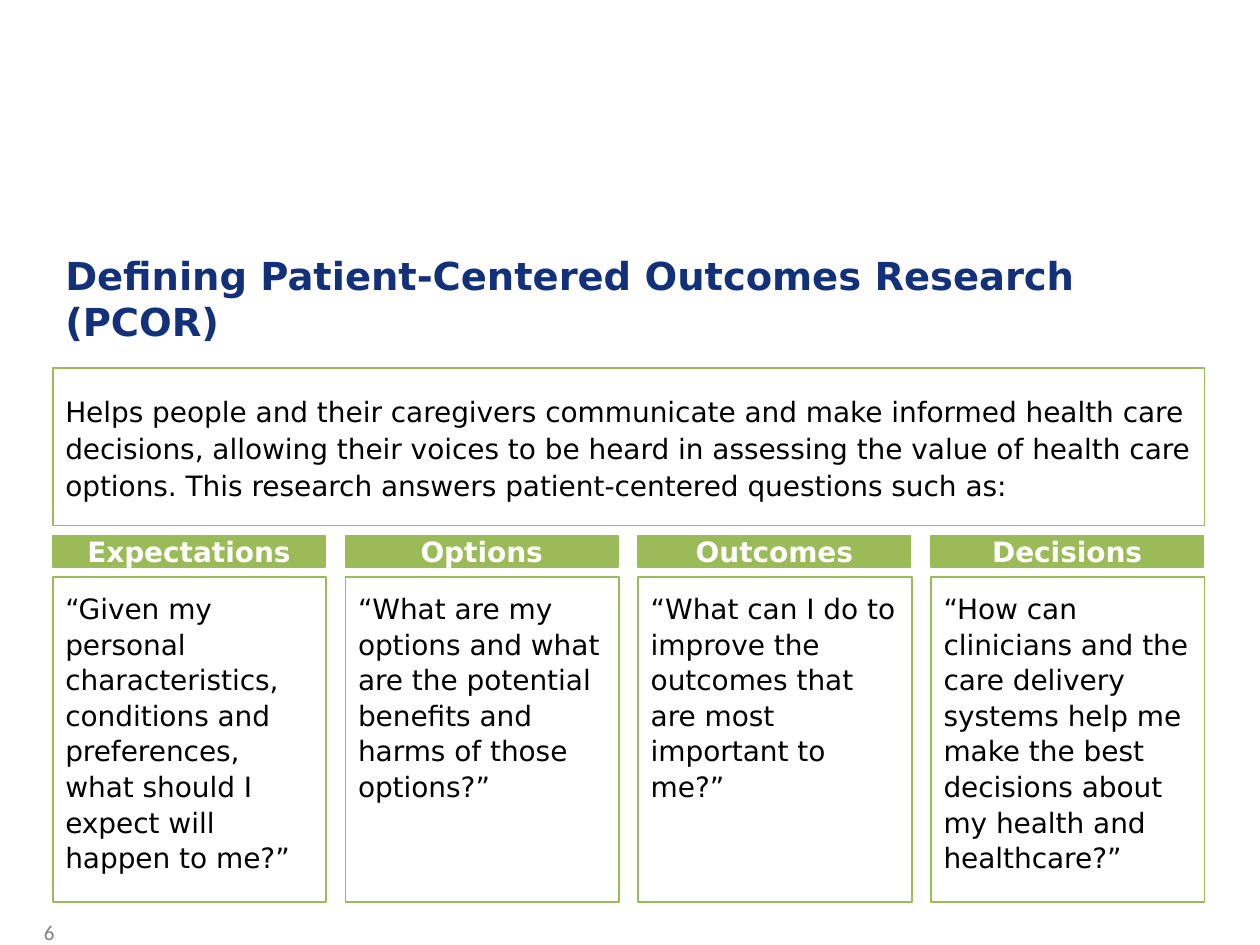
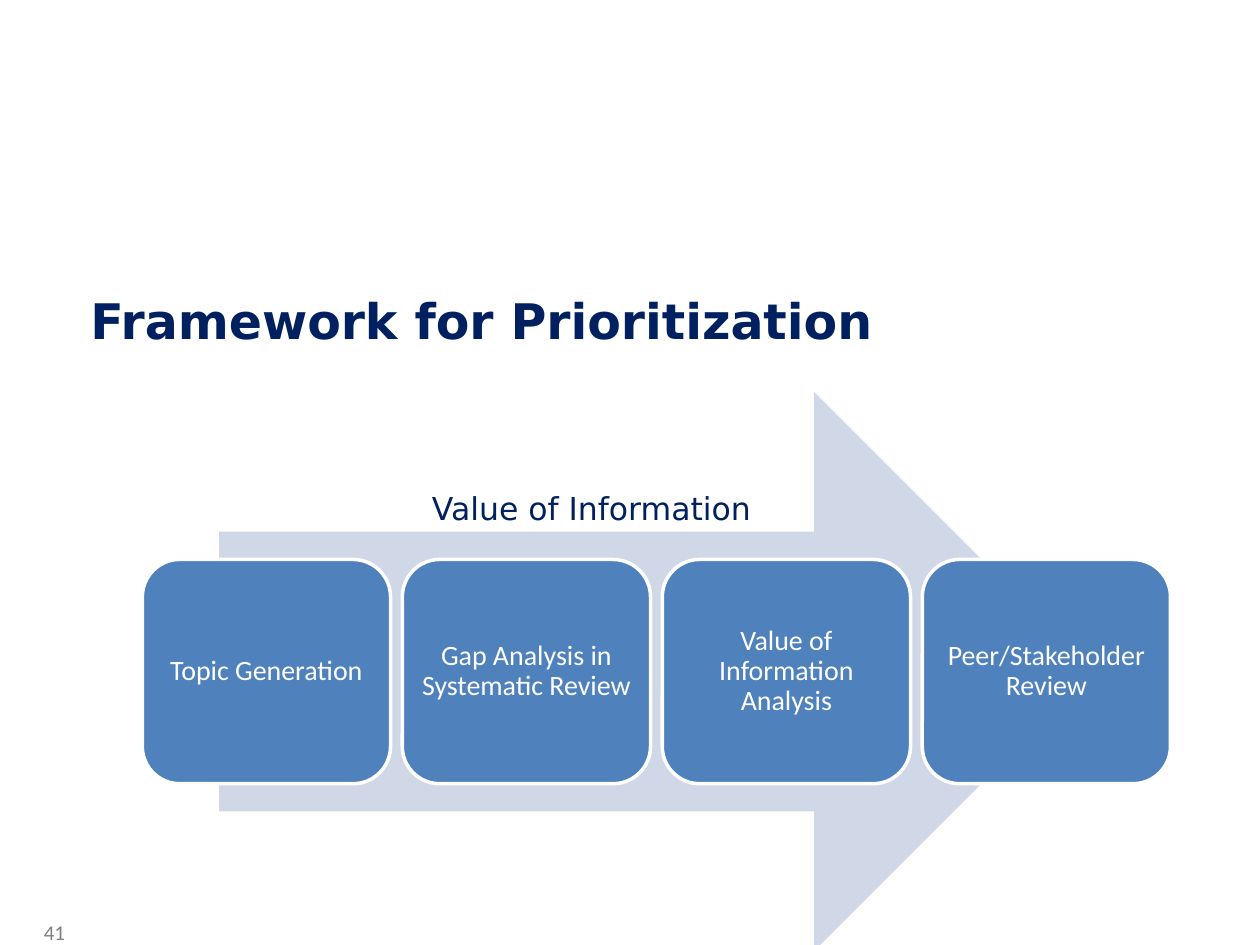
from pptx import Presentation
from pptx.dml.color import RGBColor
from pptx.enum.shapes import MSO_SHAPE as Shape
from pptx.enum.text import MSO_ANCHOR as Anchor, PP_ALIGN as Align
from pptx.util import Inches, Pt

COLORS = {
    "green": "9BBB59", "navy": "13307A", "dark": "002060", "blue": "4F81BD",
    "pale": "D0D8E8", "gray": "7F7F7F", "black": "000000", "white": "FFFFFF",
}
SANS = "DejaVu Sans"
BODY = "Calibri"

QUESTIONS = [
    ("Expectations", "“Given my personal characteristics, conditions and preferences, "
                     "what should I expect will happen to me?”"),
    ("Options", "“What are my options and what are the potential benefits and harms "
                "of those options?”"),
    ("Outcomes", "“What can I do to improve the outcomes that are most important to me?”"),
    ("Decisions", "“How can clinicians and the care delivery systems help me make the best "
                  "decisions about my health and healthcare?”"),
]
STEPS = ["Topic Generation", "Gap Analysis in Systematic Review",
         "Value of Information Analysis", "Peer/Stakeholder Review"]


def color(name):
    """Return the named colour."""
    return RGBColor.from_string(COLORS[name])


def write(box, text, size, ink, font=SANS, bold=False, align=Align.LEFT,
          anchor=Anchor.TOP, margins=(0.1, 0.05), spacing=1.0):
    """Write one styled paragraph into a box."""
    frame = box.text_frame
    frame.word_wrap = True
    frame.vertical_anchor = anchor
    frame.margin_left = frame.margin_right = Inches(margins[0])
    frame.margin_top = frame.margin_bottom = Inches(margins[1])
    para = frame.paragraphs[0]
    para.text = text
    para.alignment = align
    para.line_spacing = spacing
    para.font.name = font
    para.font.size = Pt(size)
    para.font.bold = bold
    para.font.color.rgb = color(ink)


def add_label(page, area, text, size, ink, **style):
    """Add a text box."""
    box = page.shapes.add_textbox(*map(Inches, area))
    write(box, text, size, ink, **style)


def add_panel(page, kind, area, fill=None, line=None, weight=1):
    """Add a flat preset shape with optional fill and outline."""
    panel = page.shapes.add_shape(kind, *map(Inches, area))
    panel.shadow.inherit = False
    if fill:
        panel.fill.solid()
        panel.fill.fore_color.rgb = color(fill)
    else:
        panel.fill.background()
    if line:
        panel.line.color.rgb = color(line)
        panel.line.width = Pt(weight)
    else:
        panel.line.fill.background()
    return panel


def add_page(deck, number, title, area, size, ink, align=Align.LEFT):
    """Add a page with its title and page number."""
    page = deck.slides.add_slide(deck.slide_layouts[6])
    add_label(page, area, title, size, ink, bold=True, align=align)
    add_label(page, (0.25, 7.25, 0.67, 0.3), str(number), 12, "gray", font=BODY)
    return page


def add_question(page, left, heading, question):
    """Add a heading bar above an outlined question."""
    bar = add_panel(page, Shape.RECTANGLE, (left, 4.25, 2.16, 0.25), "green", "green")
    write(bar, heading, 16, "white", bold=True, align=Align.CENTER,
          anchor=Anchor.MIDDLE, margins=(0.04, 0.04))
    panel = add_panel(page, Shape.RECTANGLE, (left, 4.58, 2.17, 2.58), line="green")
    write(panel, question, 16, "black", margins=(0.1, 0.1), spacing=1.06)


def add_step(page, left, text):
    """Add one rounded step of the framework."""
    step = add_panel(page, Shape.ROUNDED_RECTANGLE, (left, 4.44, 1.97, 1.78),
                     "blue", "white", 2)
    write(step, text, 16, "white", font=BODY, align=Align.CENTER,
          anchor=Anchor.MIDDLE, margins=(0, 0), spacing=0.9)


def build_definition(deck):
    """Build the page that defines the research."""
    page = add_page(deck, 6, "Defining Patient-Centered Outcomes Research (PCOR)",
                    (0.42, 1.95, 9.13, 0.84), 22, "navy")
    summary = add_panel(page, Shape.RECTANGLE, (0.42, 2.92, 9.14, 1.25), line="green")
    write(summary, "Helps people and their caregivers communicate and make informed "
          "health care decisions, allowing their voices to be heard in assessing the "
          "value of health care options. This research answers patient-centered "
          "questions such as:", 16, "black", anchor=Anchor.MIDDLE,
          margins=(0.1, 0.04), spacing=1.1)
    for column, (heading, question) in enumerate(QUESTIONS):
        add_question(page, 0.42 + column * 6.97 / 3, heading, question)


def build_framework(deck):
    """Build the page with the prioritization steps."""
    page = add_page(deck, 41, "Framework for Prioritization",
                    (0.12, 2.26, 7.4, 1.25), 28, "dark", Align.CENTER)
    add_panel(page, Shape.RIGHT_ARROW, (1.74, 3.11, 6.94, 4.44), "pale")
    for column, text in enumerate(STEPS):
        add_step(page, 1.13 + column * 6.19 / 3, text)
    add_label(page, (3.33, 3.83, 3.75, 0.4), "Value of Information", 18, "dark")


def main():
    """Build and save the deck."""
    deck = Presentation()
    deck.slide_width = Inches(10)
    deck.slide_height = Inches(7.5)
    build_definition(deck)
    build_framework(deck)
    deck.save("out.pptx")


if __name__ == "__main__":
    main()
